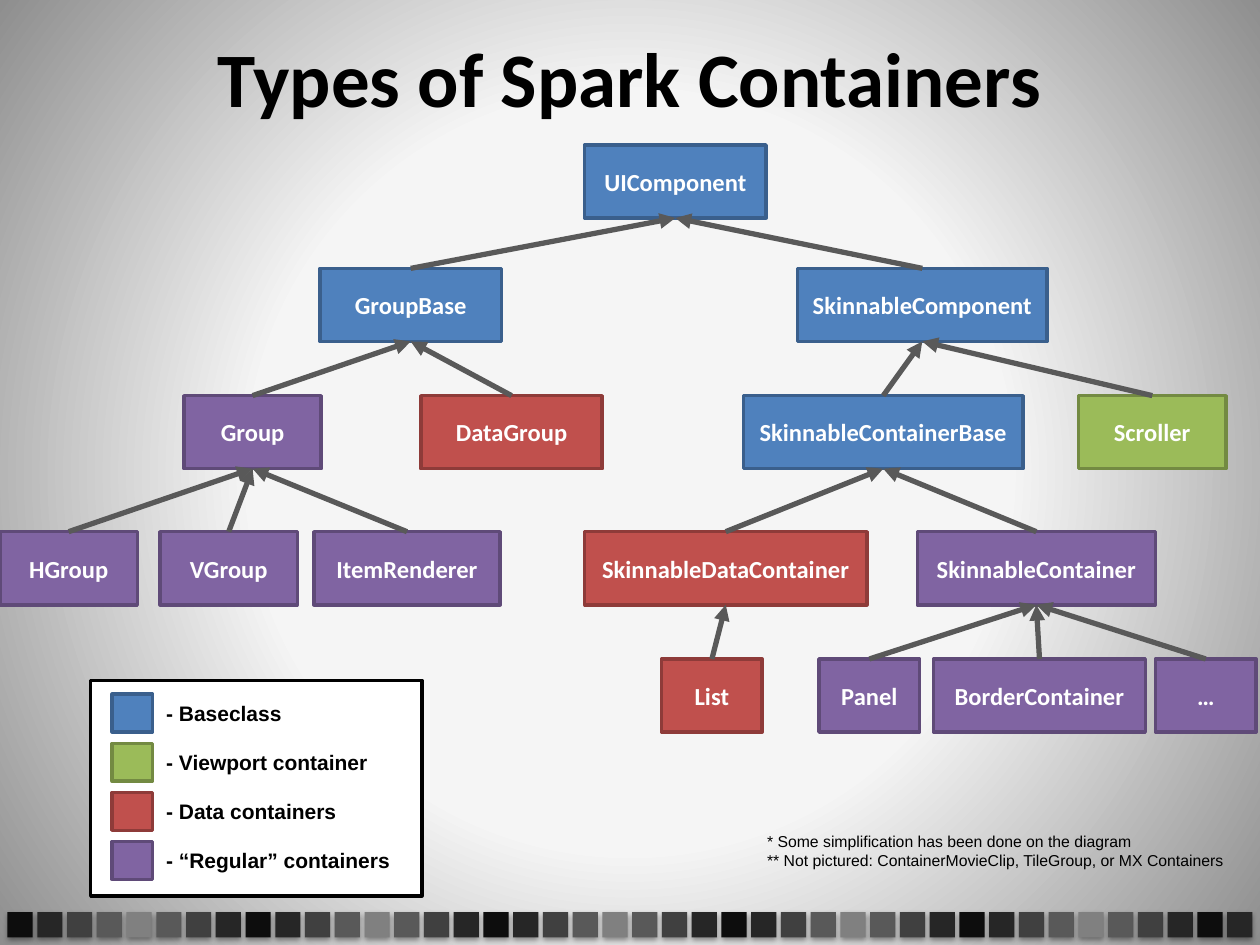
from pptx import Presentation
from pptx.dml.color import RGBColor
from pptx.enum.shapes import MSO_CONNECTOR, MSO_SHAPE
from pptx.enum.text import MSO_ANCHOR, MSO_AUTO_SIZE, PP_ALIGN
from pptx.oxml import parse_xml
from pptx.oxml.ns import nsdecls, qn
from pptx.util import Inches, Pt

BLACK = RGBColor(0x00, 0x00, 0x00)
WHITE = RGBColor(0xFF, 0xFF, 0xFF)
ARROW_GREY = RGBColor(0x59, 0x59, 0x59)
BACK_CENTRE = RGBColor(0xF5, 0xF5, 0xF5)
BACK_EDGE = RGBColor(0x8E, 0x8E, 0x8E)
STRIP_GREYS = [RGBColor(level, level, level)
               for level in (0x0D, 0x26, 0x40, 0x59, 0x80, 0x59, 0x40, 0x26)]

# Fill and outline of each kind of container
BASE = (RGBColor(0x4F, 0x81, 0xBD), RGBColor(0x3A, 0x5F, 0x8C))
VIEWPORT = (RGBColor(0x9B, 0xBB, 0x59), RGBColor(0x73, 0x8A, 0x42))
DATA = (RGBColor(0xC0, 0x50, 0x4D), RGBColor(0x8E, 0x3B, 0x39))
REGULAR = (RGBColor(0x80, 0x64, 0xA2), RGBColor(0x5F, 0x4A, 0x78))

LEGEND = [
    ("- Baseclass", BASE, 1.12),
    ("- Viewport container", VIEWPORT, 1.82),
    ("- Data containers", DATA, 1.57),
    ("- “Regular” containers", REGULAR, 2),
]

LEVEL_TOPS = [1.15, 2.13, 3.14, 4.22, 5.23]
CLASS_HEIGHT = 0.58

# Name, parent, level, left, width, kind; parents come before children
CLASSES = [
    ("UIComponent", None, 0, 4.64, 1.44, BASE),
    ("GroupBase", "UIComponent", 1, 2.54, 1.44, BASE),
    ("SkinnableComponent", "UIComponent", 1, 6.33, 1.98, BASE),
    ("Group", "GroupBase", 2, 1.46, 1.09, REGULAR),
    ("DataGroup", "GroupBase", 2, 3.34, 1.44, DATA),
    ("SkinnableContainerBase", "SkinnableComponent", 2, 5.9, 2.22, BASE),
    ("Scroller", "SkinnableComponent", 2, 8.56, 1.17, VIEWPORT),
    ("HGroup", "Group", 3, 0, 1.09, REGULAR),
    ("VGroup", "Group", 3, 1.27, 1.09, REGULAR),
    ("ItemRenderer", "Group", 3, 2.49, 1.48, REGULAR),
    ("SkinnableDataContainer", "SkinnableContainerBase", 3, 4.64, 2.24, DATA),
    ("SkinnableContainer", "SkinnableContainerBase", 3, 7.28, 1.89, REGULAR),
    ("List", "SkinnableDataContainer", 4, 5.25, 0.8, DATA),
    ("Panel", "SkinnableContainer", 4, 6.5, 0.8, REGULAR),
    ("BorderContainer", "SkinnableContainer", 4, 7.41, 1.68, REGULAR),
    ("…", "SkinnableContainer", 4, 9.17, 0.8, REGULAR),
]


def paint_background(page):
    """Fill the page with a round gradient, light in the middle."""
    fill = page.background.fill
    fill.gradient()
    stops = [(0.48, BACK_CENTRE), (1, BACK_EDGE)]
    for stop, (position, color) in zip(fill.gradient_stops, stops):
        stop.position = position
        stop.color.rgb = color
    linear = page._element.find(".//" + qn("a:lin"))
    linear.getparent().replace(linear, parse_xml(
        f'<a:path {nsdecls("a")} path="circle">'
        '<a:fillToRect l="50000" t="50000" r="50000" b="50000"/></a:path>'))


def add_box(page, left, top, width, height, fill, outline=None):
    box = page.shapes.add_shape(MSO_SHAPE.RECTANGLE, Inches(left), Inches(top),
                                Inches(width), Inches(height))
    box.shadow.inherit = False
    box.fill.solid()
    box.fill.fore_color.rgb = fill
    if outline is None:
        box.line.fill.background()
    else:
        box.line.color.rgb = outline
        box.line.width = Pt(2)
    return box


def write(shape, lines, size, font, color=BLACK, bold=False, align=PP_ALIGN.LEFT):
    frame = shape.text_frame
    frame.text = "\n".join(lines)
    for para in frame.paragraphs:
        para.alignment = align
        para.font.size = Pt(size)
        para.font.name = font
        para.font.bold = bold
        para.font.color.rgb = color


def add_label(page, left, top, width, height, lines, size, bold=False):
    label = page.shapes.add_textbox(Inches(left), Inches(top),
                                    Inches(width), Inches(height))
    label.text_frame.word_wrap = False
    label.text_frame.auto_size = MSO_AUTO_SIZE.SHAPE_TO_FIT_TEXT
    write(label, lines, size, "Arial", bold=bold)


def add_title(page, text):
    title = page.shapes.add_textbox(0, Inches(0.13), Inches(10), Inches(0.95))
    title.text_frame.word_wrap = True
    title.text_frame.vertical_anchor = MSO_ANCHOR.MIDDLE
    write(title, [text], 44, "Calibri", bold=True, align=PP_ALIGN.CENTER)


def add_strip(page):
    """Row of shadowed grey squares along the bottom edge."""
    count, first, last = 42, 0.06, 9.74
    pitch = (last - first) / (count - 1)
    for index in range(count):
        grey = STRIP_GREYS[index % len(STRIP_GREYS)]
        square = add_box(page, first + index * pitch, 7.24, 0.2, 0.2, grey)
        effects = square._element.spPr.find(qn("a:effectLst"))
        effects.append(parse_xml(
            f'<a:outerShdw {nsdecls("a")} blurRad="{Pt(3.1)}" dist="{Pt(1.6)}" '
            'dir="5400000" rotWithShape="0"><a:srgbClr val="000000">'
            '<a:alpha val="38000"/></a:srgbClr></a:outerShdw>'))


def add_legend(page):
    add_box(page, 0.72, 5.4, 2.63, 1.71, WHITE, BLACK)
    for row, (text, kind, width) in enumerate(LEGEND):
        top = 5.51 + row * 0.39
        add_box(page, 0.89, top, 0.32, 0.3, *kind)
        add_label(page, 1.22, top, width, 0.3, [text], 12, bold=True)


def add_class(page, name, level, left, width, kind):
    box = add_box(page, left, LEVEL_TOPS[level], width, CLASS_HEIGHT, *kind)
    box.text_frame.vertical_anchor = MSO_ANCHOR.MIDDLE
    write(box, [name], 14, "Calibri", WHITE, bold=True, align=PP_ALIGN.CENTER)
    return box


def add_arrow(page, child, parent):
    """Arrow from the top of the child to the bottom of its parent."""
    arrow = page.shapes.add_connector(MSO_CONNECTOR.STRAIGHT, 0, 0, 0, 0)
    arrow.begin_connect(child, 0)
    arrow.end_connect(parent, 2)
    arrow.line.color.rgb = ARROW_GREY
    arrow.line.width = Pt(3)
    arrow.line._get_or_add_ln().append(
        parse_xml(f'<a:tailEnd {nsdecls("a")} type="triangle"/>'))
    arrow._element.spPr.append(parse_xml(f'<a:effectLst {nsdecls("a")}/>'))


def add_class_tree(page):
    boxes = {name: add_class(page, name, level, left, width, kind)
             for name, _, level, left, width, kind in CLASSES}
    for name, parent, *_ in CLASSES:
        if parent:
            add_arrow(page, boxes[name], boxes[parent])


def main():
    deck = Presentation()
    deck.slide_width, deck.slide_height = Inches(10), Inches(7.5)
    page = deck.slides.add_slide(deck.slide_layouts[6])
    paint_background(page)
    add_strip(page)
    add_title(page, "Types of Spark Containers")
    add_legend(page)
    add_label(page, 5.99, 6.55, 3.86, 0.4, [
        "* Some simplification has been done on the diagram",
        "** Not pictured: ContainerMovieClip, TileGroup, or MX Containers",
    ], 9)
    add_class_tree(page)
    deck.save("out.pptx")


if __name__ == "__main__":
    main()
